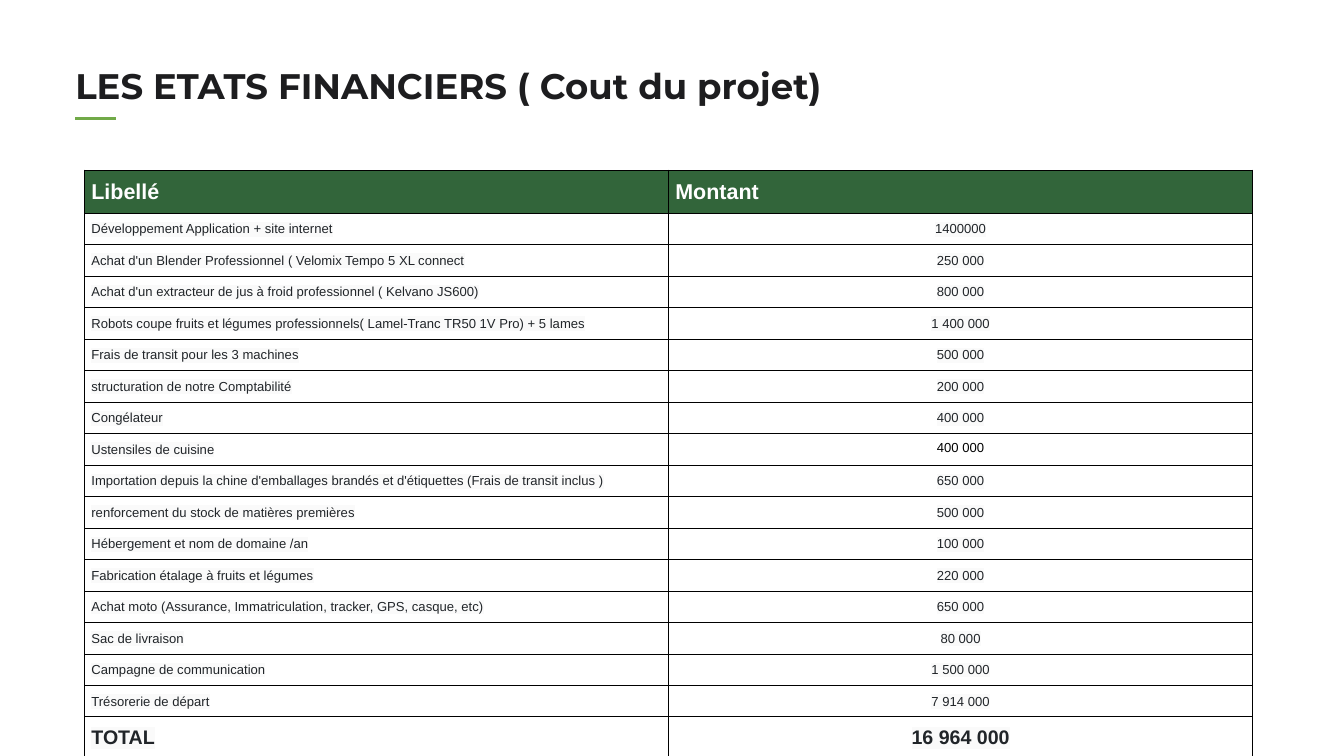
from dataclasses import dataclass

from lxml.etree import SubElement
from pptx import Presentation
from pptx.dml.color import RGBColor
from pptx.enum.shapes import MSO_CONNECTOR
from pptx.enum.text import MSO_ANCHOR, MSO_AUTO_SIZE, PP_ALIGN
from pptx.oxml.ns import qn
from pptx.slide import Slide
from pptx.table import _Cell
from pptx.util import Emu, Pt


@dataclass(frozen=True)
class Theme:
    heading_font: str = "Montserrat"
    body_font: str = "Arial"
    ink: str = "1D1D1F"
    body: str = "212529"
    black: str = "000000"
    white: str = "FFFFFF"
    accent: str = "71AA48"
    header: str = "32653A"
    marker: str = "FAFAFA"
    title_size: int = 38
    header_size: int = 23
    body_size: int = 14
    total_size: int = 21
    accent_width: float = 3.75
    border_width: float = 0.75


@dataclass(frozen=True)
class CellStyle:
    size: int
    color: str
    bold: bool = False
    marker: str | None = None
    fill: str | None = None
    spacing: float | None = 1.15


@dataclass(frozen=True)
class CostRow:
    label: str
    amount: str
    label_style: CellStyle
    amount_style: CellStyle
    amount_align: PP_ALIGN = PP_ALIGN.CENTER


THEME = Theme()
HEADER = CellStyle(THEME.header_size, THEME.white, True, THEME.header, THEME.header)
BODY = CellStyle(THEME.body_size, THEME.body, marker=THEME.marker)
PLAIN = CellStyle(THEME.body_size, THEME.black, spacing=None)
TOTAL = CellStyle(THEME.total_size, THEME.body, True, THEME.marker)

COSTS = [
    ("Développement Application + site internet", "1400000"),
    ("Achat d'un Blender Professionnel ( Velomix Tempo 5 XL connect", "250 000"),
    ("Achat d'un extracteur de jus à froid professionnel ( Kelvano JS600)", "800 000"),
    ("Robots coupe fruits et légumes professionnels( Lamel-Tranc TR50 1V Pro) + 5 lames",
     "1 400 000"),
    ("Frais de transit pour les 3 machines", "500 000"),
    ("structuration de notre Comptabilité", "200 000"),
    ("Congélateur", "400 000"),
    ("Ustensiles de cuisine", "400 000"),
    ("Importation depuis la chine d'emballages brandés et d'étiquettes "
     "(Frais de transit inclus )", "650 000"),
    ("renforcement du stock de matières premières", "500 000"),
    ("Hébergement et nom de domaine /an", "100 000"),
    ("Fabrication étalage à fruits et légumes", "220 000"),
    ("Achat moto (Assurance, Immatriculation, tracker, GPS, casque, etc)", "650 000"),
    ("Sac de livraison", "80 000"),
    ("Campagne de communication", "1 500 000"),
    ("Trésorerie de départ", "7 914 000"),
]
PLAIN_AMOUNT = "Ustensiles de cuisine"
ROWS = [
    CostRow("Libellé", "Montant", HEADER, HEADER, PP_ALIGN.LEFT),
    *(CostRow(label, amount, BODY, PLAIN if label == PLAIN_AMOUNT else BODY)
      for label, amount in COSTS),
    CostRow("TOTAL", "16 964 000", TOTAL, TOTAL),
]


def px(n: int) -> Emu:
    """100 px to the inch."""
    return Emu(n * 9144)


def rgb(color: str) -> RGBColor:
    return RGBColor.from_string(color)


def add_title(s: Slide, text: str) -> None:
    sp = s.shapes.title
    sp.left, sp.top, sp.width, sp.height = px(112), px(89), px(1630), px(64)
    tf = sp.text_frame
    tf.margin_left = tf.margin_top = tf.margin_right = tf.margin_bottom = 0
    tf.word_wrap = True
    tf.auto_size = MSO_AUTO_SIZE.SHAPE_TO_FIT_TEXT
    tf.vertical_anchor = MSO_ANCHOR.TOP
    p = tf.paragraphs[0]
    p.alignment = PP_ALIGN.LEFT
    p.line_spacing = 1.1
    r = p.add_run()
    r.text = text
    r.font.size = Pt(THEME.title_size)
    r.font.bold = True
    r.font.color.rgb = rgb(THEME.ink)
    r.font.name = THEME.heading_font


def add_accent(s: Slide) -> None:
    line = s.shapes.add_connector(MSO_CONNECTOR.STRAIGHT, px(112), px(176), px(173), px(176))
    line.line.color.rgb = rgb(THEME.accent)
    line.line.width = Pt(THEME.accent_width)
    SubElement(line._element.spPr, qn("a:effectLst"))


def set_borders(cell: _Cell) -> None:
    tc_pr = cell._tc.get_or_add_tcPr()
    for i, side in enumerate(("lnL", "lnR", "lnT", "lnB")):
        ln = SubElement(tc_pr, qn(f"a:{side}"), w=str(Pt(THEME.border_width)))
        SubElement(SubElement(ln, qn("a:solidFill")), qn("a:srgbClr"), val=THEME.black)
        tc_pr.insert(i, ln)


def fill_cell(cell: _Cell, text: str, style: CellStyle, align: PP_ALIGN) -> None:
    cell.margin_left = cell.margin_top = cell.margin_right = cell.margin_bottom = px(10)
    if style.fill:
        cell.fill.solid()
        cell.fill.fore_color.rgb = rgb(style.fill)
    else:
        cell.fill.background()
    set_borders(cell)
    p = cell.text_frame.paragraphs[0]
    p.alignment = align
    if style.spacing:
        p.line_spacing = style.spacing
    r = p.add_run()
    r.text = text
    r.font.size = Pt(style.size)
    r.font.bold = style.bold
    r.font.color.rgb = rgb(style.color)
    # The highlight must come between the colour and the typeface
    if style.marker:
        highlight = SubElement(r.font._element, qn("a:highlight"))
        SubElement(highlight, qn("a:srgbClr"), val=style.marker)
    r.font.name = THEME.body_font


def add_cost_table(s: Slide, rows: list[CostRow]) -> None:
    row_height = 42
    table = s.shapes.add_table(len(rows), 2, px(126), px(253),
                               px(1738), px(row_height * len(rows))).table
    table.first_row = table.horz_banding = False
    for row, cost in zip(table.rows, rows):
        row.height = px(row_height)
        label, amount = row.cells
        fill_cell(label, cost.label, cost.label_style, PP_ALIGN.LEFT)
        fill_cell(amount, cost.amount, cost.amount_style, cost.amount_align)


def main() -> None:
    prs = Presentation()
    prs.slide_width, prs.slide_height = px(2000), px(1125)
    s = prs.slides.add_slide(prs.slide_layouts[5])

    # Heading
    add_accent(s)
    add_title(s, "LES ETATS FINANCIERS ( Cout du projet)")

    # Project costs
    add_cost_table(s, ROWS)

    prs.save("out.pptx")


if __name__ == "__main__":
    main()
